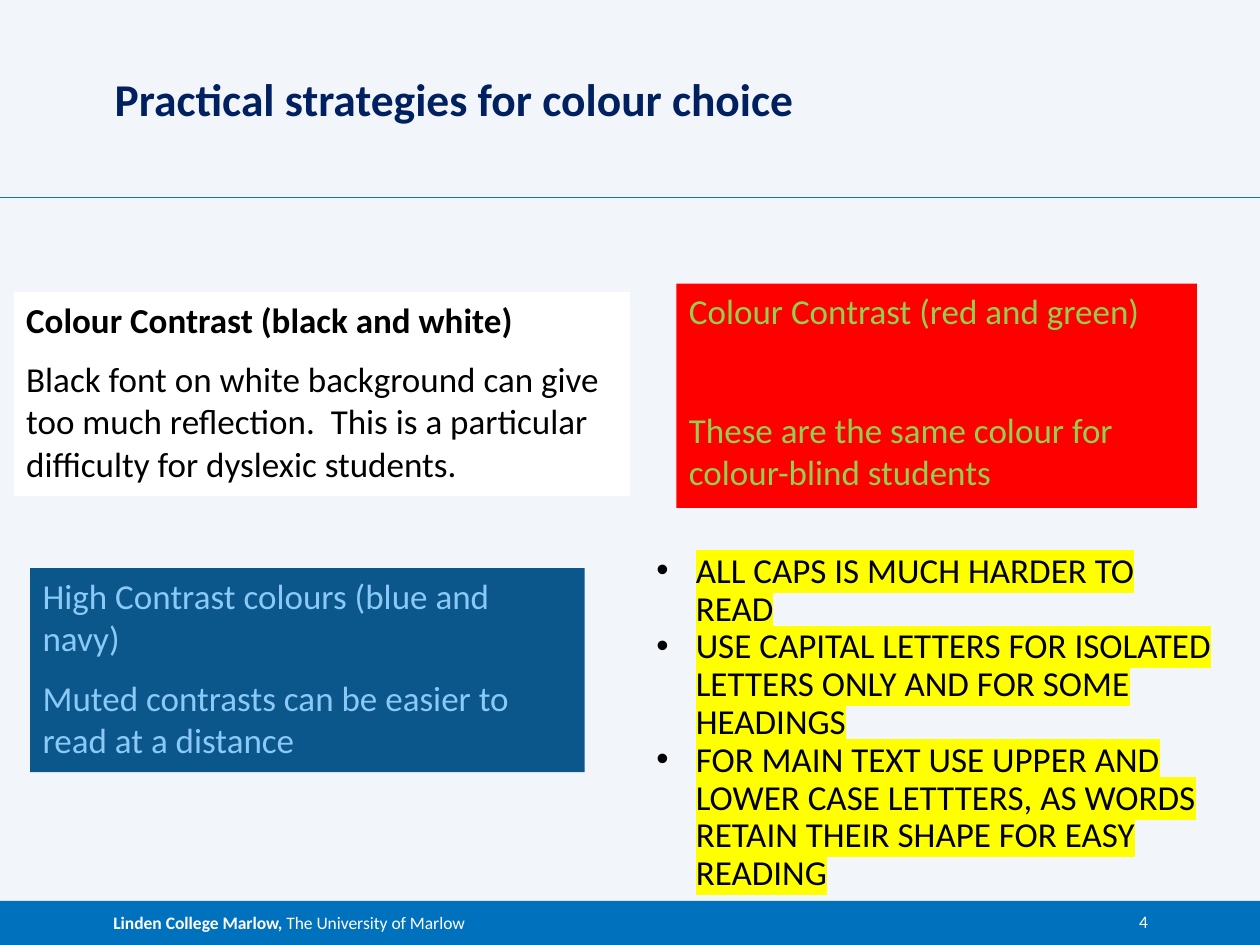
from lxml.etree import SubElement
from pptx import Presentation
from pptx.dml.color import RGBColor
from pptx.enum.shapes import MSO_CONNECTOR as CONNECTOR, MSO_SHAPE as SHAPE
from pptx.enum.text import MSO_ANCHOR as ANCHOR, PP_ALIGN as ALIGN
from pptx.oxml.ns import qn
from pptx.util import Pt

FONT = "Calibri"
WIDTH, HEIGHT = 720, 540
BACKGROUND, BLUE, RULE = "F2F6FB", "0071BC", "0E73B9"
WHITE, BLACK, NAVY, YELLOW = "FFFFFF", "000000", "002060", "FFFF00"
BODY_SIZE, SMALL_SIZE = 20, 10

# left, top, width, height, fill, text colour, bold heading, gap, heading, body
CONTRAST_BOXES = [
    (7.92, 167, 352, 116.6, WHITE, BLACK, True, 10,
     "Colour Contrast (black and white)",
     "Black font on white background can give too much reflection.  "
     "This is a particular difficulty for dyslexic students."),
    (17.3, 324.7, 316.8, 116.6, "0B568B", "8BCAF6", False, 10,
     "High Contrast colours (blue and navy)",
     "Muted contrasts can be easier to read at a distance"),
    (386.6, 162, 297.4, 128.2, "FF0000", "92D050", False, 44,
     "Colour Contrast (red and green)",
     "These are the same colour for colour-blind students"),
]
CAPITALS_ADVICE = [
    "ALL CAPS IS MUCH HARDER TO READ",
    "USE CAPITAL LETTERS FOR ISOLATED LETTERS ONLY AND FOR SOME HEADINGS",
    "FOR MAIN TEXT USE UPPER AND LOWER CASE LETTTERS, AS WORDS RETAIN "
    "THEIR SHAPE FOR EASY READING",
]


def colour(hex_string):
    return RGBColor.from_string(hex_string)


def points(*lengths):
    return [Pt(length) for length in lengths]


def add_run(paragraph, text, size, hex_string, bold=False):
    run = paragraph.add_run()
    run.text = text
    run.font.name = FONT
    run.font.size = Pt(size)
    run.font.bold = bold
    run.font.color.rgb = colour(hex_string)
    return run


def highlight(run, hex_string):
    properties = run.font._element
    mark = SubElement(properties, qn("a:highlight"))
    SubElement(mark, qn("a:srgbClr"), val=hex_string)
    properties.find(qn("a:solidFill")).addnext(mark)


def add_bullet(paragraph, indent):
    properties = paragraph._p.get_or_add_pPr()
    properties.set("marL", str(Pt(indent)))
    properties.set("indent", str(-Pt(indent)))
    SubElement(properties, qn("a:buFont"), typeface="Arial")
    SubElement(properties, qn("a:buChar"), char="•")


def set_frame(shape, anchor, margins=(7.2, 3.6, 7.2, 3.6)):
    """Wrap the text; margins run left, top, right, bottom."""
    frame = shape.text_frame
    frame.word_wrap = True
    frame.vertical_anchor = anchor
    (frame.margin_left, frame.margin_top,
     frame.margin_right, frame.margin_bottom) = points(*margins)
    return frame


def add_rectangle(slide, left, top, width, height, fill):
    shape = slide.shapes.add_shape(
        SHAPE.RECTANGLE, *points(left, top, width, height))
    shape.shadow.inherit = False
    shape.fill.solid()
    shape.fill.fore_color.rgb = colour(fill)
    shape.line.fill.background()
    return shape


def add_rule(slide, top):
    line = slide.shapes.add_connector(
        CONNECTOR.STRAIGHT, *points(0, top, WIDTH, top))
    line.line.color.rgb = colour(RULE)
    line.line.width = Pt(0.75)
    SubElement(line._element.spPr, qn("a:effectLst"))


def add_footer(slide):
    bar = add_rectangle(slide, 0, 514.8, WIDTH, 25.2, BLUE)
    paragraph = set_frame(bar, ANCHOR.MIDDLE, (64.8, 0, 7.2, 0)).paragraphs[0]
    paragraph.alignment = ALIGN.LEFT
    add_run(paragraph, "Linden College Marlow, ", SMALL_SIZE, WHITE, True)
    add_run(paragraph, "The University of Marlow", SMALL_SIZE, WHITE)

    number = slide.shapes.add_textbox(*points(626.4, 520.6, 29.5, 12.2))
    paragraph = set_frame(number, ANCHOR.TOP, (0, 0, 0, 0)).paragraphs[0]
    paragraph.alignment = ALIGN.RIGHT
    add_run(paragraph, "4", SMALL_SIZE, WHITE)


def format_title(slide, text):
    title = slide.shapes.title
    title.left, title.top, title.width, title.height = points(
        65.5, 28.1, 590.4, 43.9)
    paragraph = set_frame(title, ANCHOR.BOTTOM, (0, 0, 0, 0)).paragraphs[0]
    paragraph.alignment = ALIGN.LEFT
    add_run(paragraph, text, 26, NAVY, True)


def add_contrast_box(slide, left, top, width, height, fill, text_colour,
                     bold_heading, gap, heading, body):
    box = add_rectangle(slide, left, top, width, height, fill)
    frame = set_frame(box, ANCHOR.TOP)
    first, second = frame.paragraphs[0], frame.add_paragraph()
    first.alignment = second.alignment = ALIGN.LEFT
    second.space_before = Pt(gap)
    add_run(first, heading, BODY_SIZE, text_colour, bold_heading)
    add_run(second, body, BODY_SIZE, text_colour)


def add_highlighted_list(slide, left, top, width, height, items):
    box = slide.shapes.add_textbox(*points(left, top, width, height))
    frame = set_frame(box, ANCHOR.TOP)
    for index, item in enumerate(items):
        paragraph = frame.add_paragraph() if index else frame.paragraphs[0]
        paragraph.line_spacing = 0.9
        add_bullet(paragraph, 22.5)
        highlight(add_run(paragraph, item, BODY_SIZE, BLACK), YELLOW)


def main():
    presentation = Presentation()
    presentation.slide_width, presentation.slide_height = points(WIDTH, HEIGHT)
    slide = presentation.slides.add_slide(presentation.slide_layouts[5])
    slide.background.fill.solid()
    slide.background.fill.fore_color.rgb = colour(BACKGROUND)

    add_rule(slide, 113)
    add_footer(slide)
    format_title(slide, "Practical strategies for colour choice")
    for box in CONTRAST_BOXES:
        add_contrast_box(slide, *box)
    add_highlighted_list(slide, 368, 312.5, 334.8, 227.5, CAPITALS_ADVICE)
    presentation.save("out.pptx")


if __name__ == "__main__":
    main()
